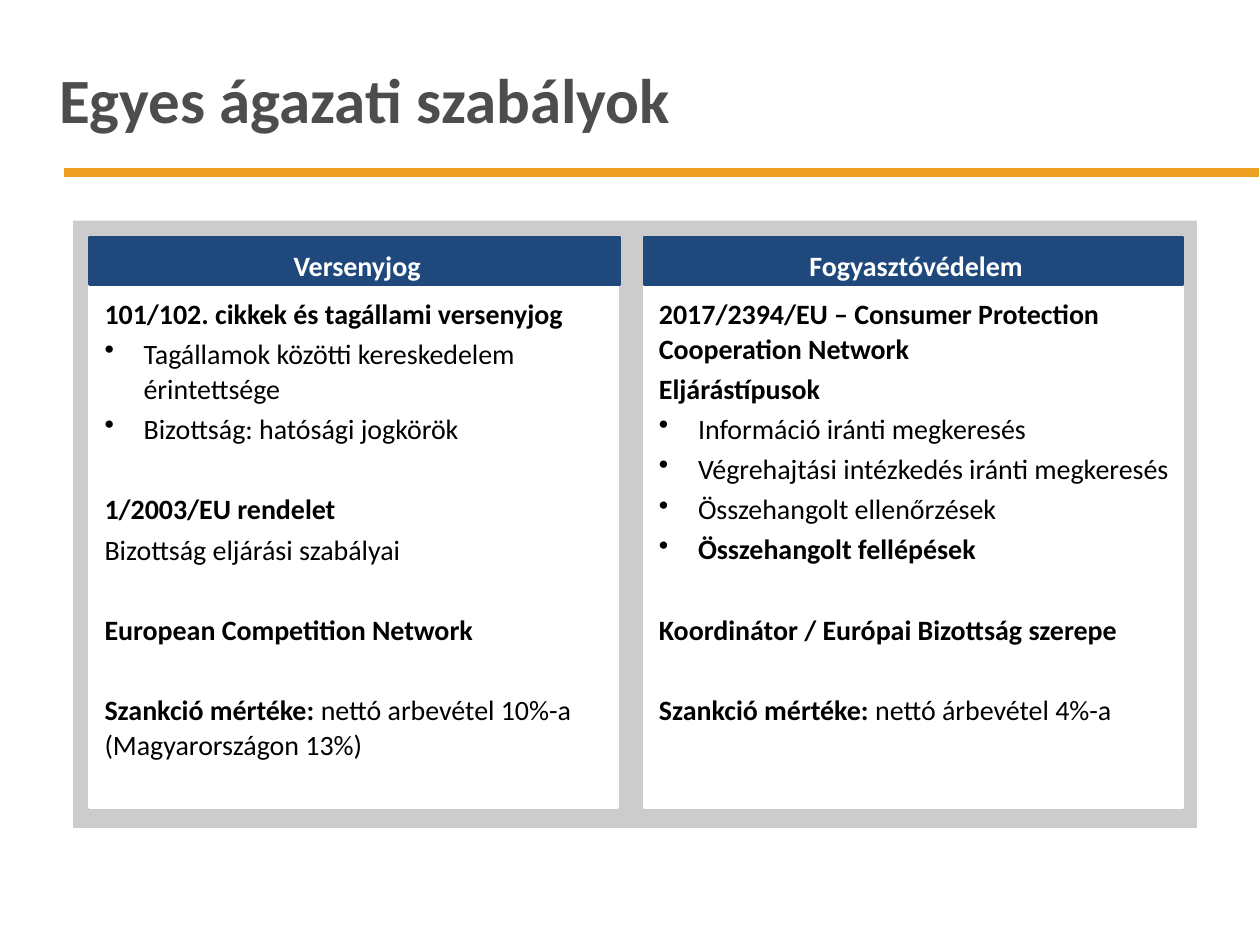
from pptx import Presentation
from pptx import util as u
from pptx.dml.color import RGBColor
from pptx.enum import shapes, text
from pptx.oxml import ns
from lxml import etree

AMBER = RGBColor(0xED, 0xA0, 0x21)
WHITE = RGBColor(0xFF, 0xFF, 0xFF)
BLACK = RGBColor(0, 0, 0)
SLATE = RGBColor(0x4D, 0x4D, 0x4D)
SILVER = RGBColor(0xCC, 0xCC, 0xCC)
NAVY = RGBColor(0x1F, 0x49, 0x7D)

HEAD, ITEM, PLAIN = "head", "item", "plain"
LEFT = [
    (HEAD, 0, [("101/102. cikkek és tagállami versenyjog", True)]),
    (ITEM, 3, [("Tagállamok közötti kereskedelem érintettsége", False)]),
    (ITEM, 3, [("Bizottság: hatósági jogkörök", False)]),
    (HEAD, 26, [("1/2003/EU rendelet", True)]),
    (PLAIN, 3, [("Bizottság eljárási szabályai", False)]),
    (HEAD, 26, [("European Competition Network", True)]),
    (PLAIN, 26, [("Szankció mértéke: ", True),
                 ("nettó arbevétel 10%-a (Magyarországon 13%)", False)]),
]
RIGHT = [
    (HEAD, 0, [("2017/2394/EU – Consumer Protection Cooperation Network", True)]),
    (HEAD, 3, [("Eljárástípusok", True)]),
    (ITEM, 3, [("Információ iránti megkeresés", False)]),
    (ITEM, 3, [("Végrehajtási intézkedés iránti megkeresés", False)]),
    (ITEM, 3, [("Összehangolt ellenőrzések", False)]),
    (ITEM, 3, [("Összehangolt fellépések", True)]),
    (HEAD, 26, [("Koordinátor / Európai Bizottság szerepe", True)]),
    (PLAIN, 26, [("Szankció mértéke: ", True), ("nettó árbevétel 4%-a", False)]),
]


class Deck:
    font = "Calibri"
    size = 16

    def __init__(self, slide):
        self.slide = slide

    def run(self, para, words, color, bold, size=None):
        run = para.add_run()
        run.text = words
        run.font.name = self.font
        run.font.size = u.Pt(size or self.size)
        run.font.bold = bold
        run.font.color.rgb = color

    def title(self, words, *box):
        shape = self.slide.shapes.title
        shape.left, shape.top, shape.width, shape.height = map(u.Inches, box)
        frame = shape.text_frame
        frame.auto_size = text.MSO_AUTO_SIZE.NONE
        frame.vertical_anchor = text.MSO_ANCHOR.MIDDLE
        para = frame.paragraphs[0]
        para.alignment = text.PP_ALIGN.LEFT
        self.run(para, words, SLATE, True, 36)

    def rect(self, fill, edge, weight, *box):
        shape = self.slide.shapes.add_shape(
            shapes.MSO_SHAPE.RECTANGLE, *map(u.Inches, box))
        shape.shadow.inherit = False
        shape.fill.solid()
        shape.fill.fore_color.rgb = fill
        if edge is None:
            shape.line.fill.background()
        else:
            shape.line.color.rgb = edge
            shape.line.width = u.Pt(weight)
        return shape

    def bullet(self, para):
        props = para._p.get_or_add_pPr()
        props.set("marL", str(u.Inches(0.31)))
        props.set("indent", str(-u.Inches(0.31)))
        mark = etree.SubElement(props, ns.qn("a:buChar"))
        mark.set("char", "•")

    def panel(self, fill, color, align, rows, *box):
        frame = self.rect(fill, fill, 1.5, *box).text_frame
        frame.word_wrap = True
        frame.vertical_anchor = text.MSO_ANCHOR.TOP
        frame.margin_left = u.Inches(0.12)
        frame.margin_top = frame.margin_right = frame.margin_bottom = u.Inches(0.08)
        for i, (kind, gap, runs) in enumerate(rows):
            para = frame.add_paragraph() if i else frame.paragraphs[0]
            if kind == ITEM:
                self.bullet(para)
            para.alignment = align
            para.line_spacing = 1.04
            para.space_before = u.Pt(gap)
            for words, bold in runs:
                self.run(para, words, color, bold)

    def column(self, head, rows, left, width, cap):
        self.panel(WHITE, BLACK, text.PP_ALIGN.LEFT, rows, left, 2.26, width, 4.15)
        self.panel(NAVY, WHITE, text.PP_ALIGN.CENTER,
                   [(HEAD, 0, [(head, True)])], left, 1.88, cap, 0.38)


def main():
    prs = Presentation()
    prs.slide_width, prs.slide_height = u.Inches(10), u.Inches(7.5)
    deck = Deck(prs.slides.add_slide(prs.slide_layouts[5]))
    deck.title("Egyes ágazati szabályok", 0.37, 0.29, 9.84, 0.98)
    deck.rect(AMBER, WHITE, 0.75, 0.5, 1.33, 9.5, 0.08)
    deck.rect(SILVER, None, 0, 0.58, 1.75, 8.92, 4.82)
    deck.column("Versenyjog", LEFT, 0.71, 4.19, 4.21)
    deck.column("Fogyasztóvédelem", RIGHT, 5.11, 4.28, 4.28)
    prs.save("out.pptx")


if __name__ == "__main__":
    main()
